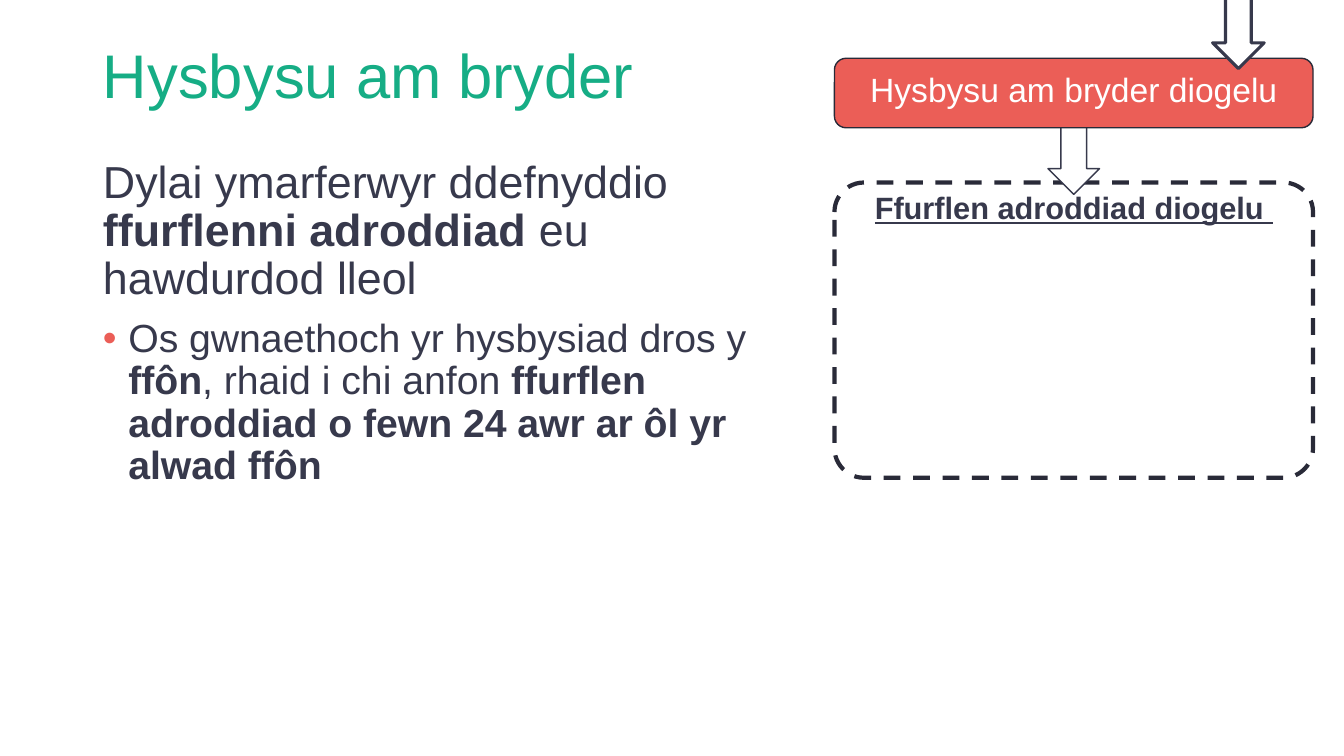
from lxml import etree
from pptx import Presentation
from pptx import util as u
from pptx.dml.color import RGBColor
from pptx.enum import dml, shapes, text
from pptx.oxml.ns import qn

WHITE = RGBColor(0xFF, 0xFF, 0xFF)
SLATE = RGBColor(0x37, 0x39, 0x4C)
OUTLINE = RGBColor(0x29, 0x2A, 0x38)
GREEN = RGBColor(0x16, 0xAD, 0x85)
CORAL = RGBColor(0xEB, 0x5E, 0x57)


def add_step(kind, left, top, width, height, fill, line, weight):
    step = slide.shapes.add_shape(kind, u.Cm(left), u.Cm(top), u.Cm(width), u.Cm(height))
    step.shadow.inherit = False
    step.fill.solid()
    step.fill.fore_color.rgb = fill
    step.line.color.rgb = line
    step.line.width = u.Pt(weight)
    return step


def add_run(paragraph, words, size, color, bold=False):
    run = paragraph.add_run()
    run.text = words
    run.font.name = "Arial"
    run.font.size = u.Pt(size)
    run.font.color.rgb = color
    run.font.bold = bold
    return run


prs = Presentation()
prs.slide_width, prs.slide_height = u.Cm(33.87), u.Cm(19.05)
slide = prs.slides.add_slide(prs.slide_layouts[1])

heading = slide.shapes.title
advice = slide.placeholders[1]
for holder, top, height, anchor in (
    (heading, 1.02, 1.93, text.MSO_ANCHOR.MIDDLE),
    (advice, 3.89, 12.47, text.MSO_ANCHOR.TOP),
):
    holder.left, holder.top = u.Cm(2.34), u.Cm(top)
    holder.width, holder.height = u.Cm(17.73), u.Cm(height)
    holder.text_frame.word_wrap = True
    holder.text_frame.auto_size = text.MSO_AUTO_SIZE.NONE
    holder.text_frame.vertical_anchor = anchor

heading_line = heading.text_frame.paragraphs[0]
heading_line.alignment = text.PP_ALIGN.LEFT
heading_line.line_spacing = 0.9
add_run(heading_line, "Hysbysu am bryder", 44, GREEN)

guidance = advice.text_frame.paragraphs[0]
phone_rule = advice.text_frame.add_paragraph()

guidance_props = guidance._p.get_or_add_pPr()
guidance_props.set("marL", "0")
guidance_props.set("indent", "0")
etree.SubElement(guidance_props, qn("a:buNone"))

phone_props = phone_rule._p.get_or_add_pPr()
phone_props.set("marL", str(u.Cm(0.64)))
phone_props.set("indent", str(-u.Cm(0.64)))
bullet_color = etree.SubElement(phone_props, qn("a:buClr"))
etree.SubElement(bullet_color, qn("a:srgbClr"), val=str(CORAL))
etree.SubElement(phone_props, qn("a:buFont"), typeface="Arial")
etree.SubElement(phone_props, qn("a:buChar"), char="•")

for paragraph, before, size, parts in (
    (guidance, 0, 32, (
        ("Dylai ymarferwyr ddefnyddio ", False),
        ("ffurflenni adroddiad", True),
        (" eu hawdurdod lleol", False),
    )),
    (phone_rule, 10, 28, (
        ("Os gwnaethoch yr hysbysiad dros y ", False),
        ("ffôn", True),
        (", rhaid i chi anfon ", False),
        ("ffurflen adroddiad o fewn 24 awr ar ôl yr alwad ffôn", True),
    )),
):
    paragraph.alignment = text.PP_ALIGN.LEFT
    paragraph.line_spacing = 0.9
    paragraph.space_before = u.Pt(before)
    for words, bold in parts:
        add_run(paragraph, words, size, SLATE, bold)

ROUNDED = shapes.MSO_SHAPE.ROUNDED_RECTANGLE
ARROW = shapes.MSO_SHAPE.DOWN_ARROW

report_form = add_step(ROUNDED, 21.03, 4.6, 12.06, 7.44, WHITE, OUTLINE, 3)
report_form.adjustments[0] = 0.1
report_form.line.dash_style = dml.MSO_LINE.DASH
add_step(ARROW, 26.41, 2.87, 1.3, 2.03, WHITE, SLATE, 1)
concern = add_step(ROUNDED, 21.03, 1.47, 12.06, 1.75, CORAL, OUTLINE, 1)
add_step(ARROW, 30.56, -0.2, 1.3, 1.93, WHITE, SLATE, 2.25)

for step, words, size, color, anchor in (
    (report_form, "Ffurflen adroddiad diogelu ", 22, SLATE, text.MSO_ANCHOR.TOP),
    (concern, "Hysbysu am bryder diogelu", 24, WHITE, text.MSO_ANCHOR.MIDDLE),
):
    step.text_frame.word_wrap = True
    step.text_frame.vertical_anchor = anchor
    label = step.text_frame.paragraphs[0]
    label.alignment = text.PP_ALIGN.CENTER
    label.line_spacing = 0.8
    label_run = add_run(label, words, size, color, step is report_form)
    label_run.font.underline = step is report_form

prs.save("out.pptx")
